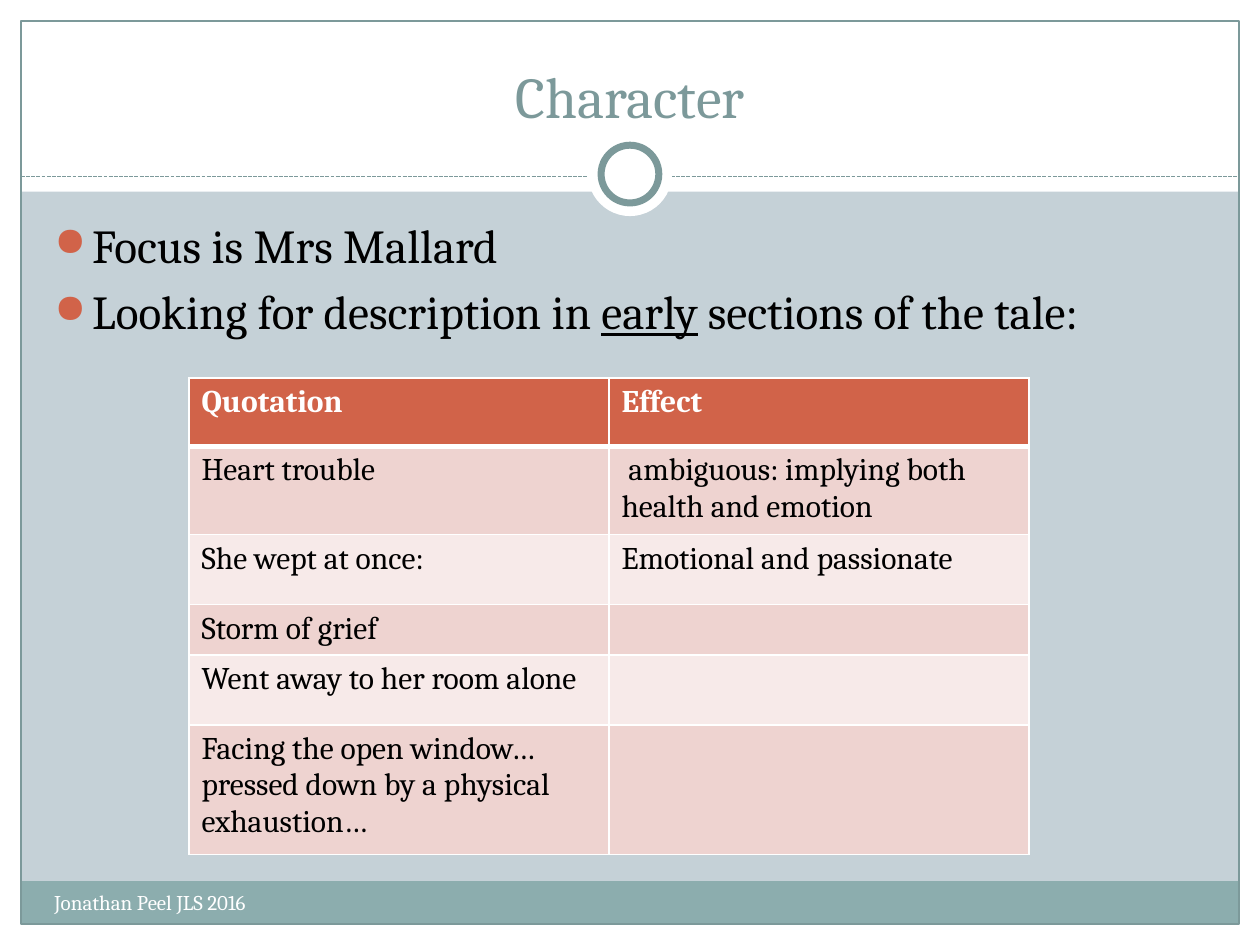
from lxml import etree
from pptx import Presentation
from pptx.dml.color import RGBColor
from pptx.enum import dml, shapes, text
from pptx.oxml import ns
from pptx.util import Pt

FONT = "Cambria"
COLORS = {
    "background": "C5D1D7", "white": "FFFFFF", "black": "000000",
    "teal": "7C999A", "footer": "8CADAE", "accent": "D16349",
    "band_dark": "EED3D0", "band_light": "F7EAE9",
}
WIDTH, HEIGHT, MARGIN = 720, 540, 12

BULLETS = [
    [("Focus is Mrs Mallard", False)],
    [("Looking for description in ", False), ("early", True),
     (" sections of the tale:", False)],
]
ROWS = [
    ("Quotation", "Effect"),
    ("Heart trouble", " ambiguous: implying both health and emotion"),
    ("She wept at once:", "Emotional and passionate"),
    ("Storm of grief", ""),
    ("Went away to her room alone", ""),
    ("Facing the open window… pressed down by a physical exhaustion…", ""),
]
ROW_HEIGHTS = [39, 40, 40, 23, 40, 74]


def color(name):
    return RGBColor.from_string(COLORS[name])


def points(box):
    return [Pt(value) for value in box]


def set_font(paragraph, size, color_name, bold=False):
    font = paragraph.font
    font.name, font.size, font.bold = FONT, Pt(size), bold
    font.color.rgb = color(color_name)


def add_shape(slide, kind, box, fill=None, line=None, line_width=0.75):
    shape = slide.shapes.add_shape(kind, *points(box))
    shape.shadow.inherit = False
    if fill:
        shape.fill.solid()
        shape.fill.fore_color.rgb = color(fill)
    else:
        shape.fill.background()
    if line:
        shape.line.color.rgb = color(line)
        shape.line.width = Pt(line_width)
    else:
        shape.line.fill.background()
    return shape


def add_textbox(slide, box):
    frame = slide.shapes.add_textbox(*points(box)).text_frame
    frame.word_wrap = True
    return frame


def add_frame(slide, box):
    """White margins, outline, dashed rule and ring around the slide."""
    left, top, width, height = box
    rectangle, oval = shapes.MSO_SHAPE.RECTANGLE, shapes.MSO_SHAPE.OVAL
    right, bottom = left + width, top + height
    for margin in [(0, bottom, WIDTH, HEIGHT - bottom), (0, 0, WIDTH, 109.5),
                   (0, 0, left, HEIGHT), (right, 0, WIDTH - right, HEIGHT)]:
        add_shape(slide, rectangle, margin, "white")
    add_shape(slide, rectangle, (left, bottom - 24.5, width, 24.5), "footer")
    add_shape(slide, rectangle, box, line="teal")

    rule = slide.shapes.add_connector(
        shapes.MSO_CONNECTOR.STRAIGHT, *points((left, 100.8, right, 100.8)))
    rule.line.color.rgb = color("teal")
    rule.line.width = Pt(0.75)
    rule.line.dash_style = dml.MSO_LINE.SQUARE_DOT
    etree.SubElement(rule.element.spPr, ns.qn("a:effectLst"))

    center_x, center_y = WIDTH / 2, 99.5
    for diameter, line in [(48, None), (33, "teal")]:
        add_shape(slide, oval, (center_x - diameter / 2, center_y - diameter / 2,
                                diameter, diameter), "white", line, 4)


def add_title(slide, box, words):
    title = slide.shapes.title
    title.left, title.top, title.width, title.height = points(box)
    title.element.getparent().append(title.element)  # in front of the white band
    frame = title.text_frame
    frame.text = words
    frame.vertical_anchor = text.MSO_ANCHOR.BOTTOM
    paragraph = frame.paragraphs[0]
    paragraph.alignment = text.PP_ALIGN.CENTER
    set_font(paragraph, 33, "teal")


def add_bullet(paragraph):
    properties = paragraph._p.get_or_add_pPr()
    properties.set("marL", str(Pt(21.6)))
    properties.set("indent", str(-Pt(21.6)))
    bullet_color = etree.Element(ns.qn("a:buClr"))
    etree.SubElement(bullet_color, ns.qn("a:srgbClr"), val=COLORS["accent"])
    size = etree.Element(ns.qn("a:buSzPct"), val="85000")
    character = etree.Element(ns.qn("a:buChar"), char="●")
    default_font = properties.find(ns.qn("a:defRPr"))
    for element in (bullet_color, size, character):
        default_font.addprevious(element)


def add_body(slide, box):
    frame = add_textbox(slide, box)
    for index, runs in enumerate(BULLETS):
        paragraph = frame.add_paragraph() if index else frame.paragraphs[0]
        paragraph.space_before = Pt(5.4)
        set_font(paragraph, 27, "black")
        add_bullet(paragraph)
        for words, underlined in runs:
            run = paragraph.add_run()
            run.text = words
            if underlined:
                run.font.underline = True


def set_borders(cell, widths):
    properties = cell._tc.get_or_add_tcPr()
    for index, (side, width) in enumerate(widths.items()):
        border = etree.Element(ns.qn(f"a:ln{side}"), w=str(Pt(width)))
        fill = etree.SubElement(border, ns.qn("a:solidFill"))
        etree.SubElement(fill, ns.qn("a:srgbClr"), val=COLORS["white"])
        properties.insert(index, border)


def add_quotation_table(slide, box):
    table = slide.shapes.add_table(len(ROWS), 2, *points(box)).table
    for column in table.columns:
        column.width = Pt(box[2] / 2)
    for row_index, (row, height) in enumerate(zip(ROWS, ROW_HEIGHTS)):
        table.rows[row_index].height = Pt(height)
        header = row_index == 0
        band = "band_dark" if row_index % 2 else "band_light"
        for column_index, words in enumerate(row):
            cell = table.cell(row_index, column_index)
            cell.text = words
            cell.fill.solid()
            cell.fill.fore_color.rgb = color("accent" if header else band)
            set_font(cell.text_frame.paragraphs[0], 18,
                     "white" if header else "black", header)
            set_borders(cell, {"L": 1, "R": 1, "T": 3 if row_index == 1 else 1,
                               "B": 3 if header else 1})


def add_footer(slide, box, words):
    frame = add_textbox(slide, box)
    frame.text = words
    set_font(frame.paragraphs[0], 12, "white")


def main():
    presentation = Presentation()
    presentation.slide_width, presentation.slide_height = Pt(WIDTH), Pt(HEIGHT)
    slide = presentation.slides.add_slide(presentation.slide_layouts[5])
    slide.background.fill.solid()
    slide.background.fill.fore_color.rgb = color("background")

    add_frame(slide, (MARGIN, MARGIN, WIDTH - 2 * MARGIN, HEIGHT - 2 * MARGIN))
    add_title(slide, (24, 18, 672, 60), "Character")
    add_body(slide, (24, 120, 670, 360))
    add_quotation_table(slide, (108, 216, 480, sum(ROW_HEIGHTS)))
    add_footer(slide, (24, 505, 282, 29), "Jonathan Peel JLS 2016")
    presentation.save("out.pptx")


if __name__ == "__main__":
    main()
